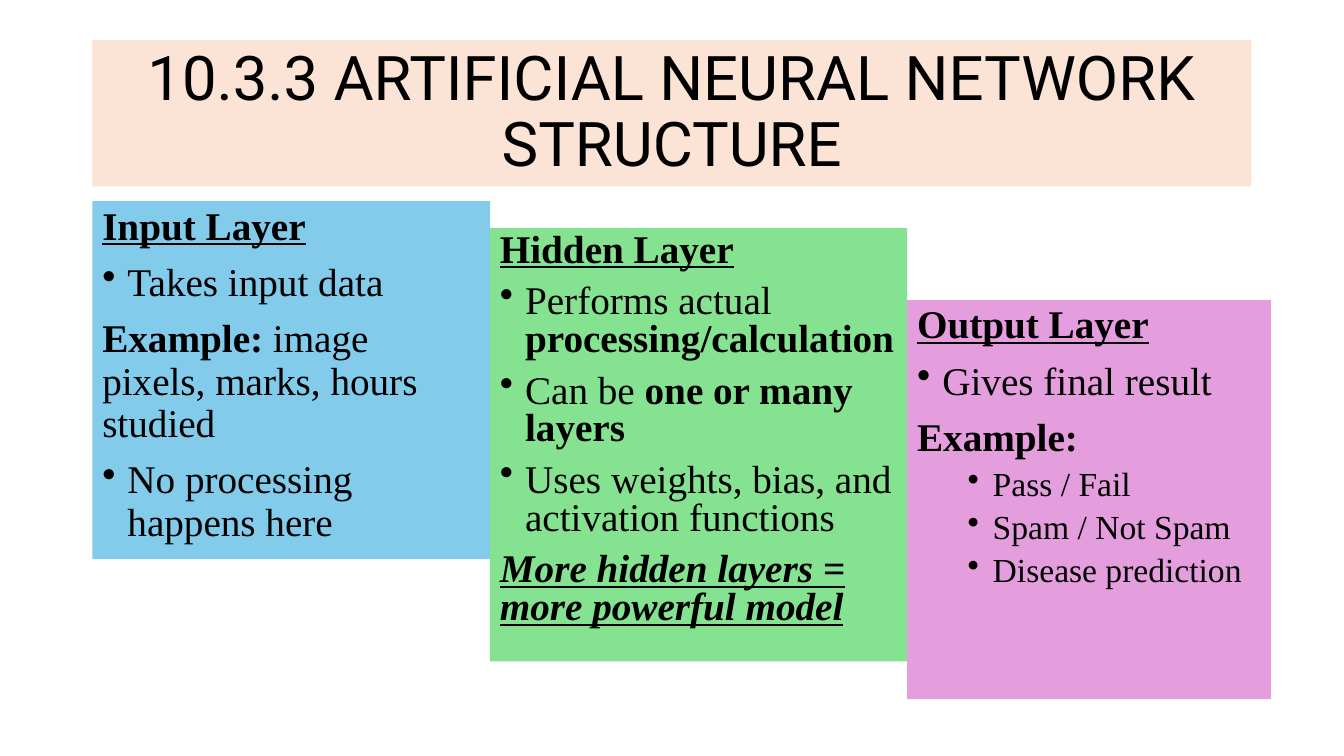
import pptx
import pptx.dml.color
import pptx.enum.shapes
import pptx.enum.text
import pptx.oxml.ns
import pptx.util
from lxml import etree

Pt = pptx.util.Pt
COLORS = {
    "title": "FBE3D6",
    "input": "83CBEB",
    "hidden": "84E291",
    "output": "E59EDD",
    "text": "000000",
}
TITLE_FONT = "Roboto"
BODY_FONT = "Times New Roman"
HANGING = 18  # bullet indent in points

# Each paragraph: (kind, runs); each run: (text, style letters b, i, u)
INPUT_LAYER = [
    ("plain", [("Input Layer", "bu")]),
    ("bullet", [("Takes input data", "")]),
    ("plain", [("Example: ", "b"), ("image pixels, marks, hours studied", "")]),
    ("bullet", [("No processing happens here", "")]),
]
HIDDEN_LAYER = [
    ("plain", [("Hidden Layer", "bu")]),
    ("bullet", [("Performs actual ", ""), ("processing/calculation", "b")]),
    ("bullet", [("Can be ", ""), ("one or many layers", "b")]),
    ("bullet", [("Uses weights, bias, and activation functions", "")]),
    ("plain", [("More hidden layers = more powerful model", "biu")]),
]
OUTPUT_LAYER = [
    ("plain", [("Output Layer", "bu")]),
    ("bullet", [("Gives final result", "")]),
    ("plain", [("Example:", "b")]),
    ("sub", [("Pass / Fail", "")]),
    ("sub", [("Spam / Not Spam", "")]),
    ("sub", [("Disease prediction", "")]),
]


def rgb(name):
    return pptx.dml.color.RGBColor.from_string(COLORS[name])


def add_panel(slide, box, color, anchor):
    """Add a borderless filled rectangle and return its text frame."""
    shape = slide.shapes.add_shape(
        pptx.enum.shapes.MSO_SHAPE.RECTANGLE, *(Pt(length) for length in box))
    shape.shadow.inherit = False
    shape.fill.solid()
    shape.fill.fore_color.rgb = rgb(color)
    shape.line.fill.background()
    text_frame = shape.text_frame
    text_frame.word_wrap = True
    text_frame.vertical_anchor = anchor
    return text_frame


def add_run(paragraph, text, font_name, size, style=""):
    run = paragraph.add_run()
    run.text = text
    run.font.name = font_name
    run.font.size = Pt(size)
    run.font.color.rgb = rgb("text")
    run.font.bold = "b" in style
    run.font.italic = "i" in style
    run.font.underline = "u" in style


def add_bullet(paragraph, left):
    properties = paragraph._p.get_or_add_pPr()
    properties.set("marL", str(Pt(left)))
    properties.set("indent", str(-Pt(HANGING)))
    bullet = etree.SubElement(properties, pptx.oxml.ns.qn("a:buChar"))
    bullet.set("char", "•")


def add_title(slide, box, text):
    text_frame = add_panel(slide, box, "title", pptx.enum.text.MSO_ANCHOR.MIDDLE)
    paragraph = text_frame.paragraphs[0]
    paragraph.alignment = pptx.enum.text.PP_ALIGN.CENTER
    paragraph.line_spacing = 0.9
    add_run(paragraph, text, TITLE_FONT, 44)


def add_layer(slide, box, color, content, line_spacing=0.9):
    text_frame = add_panel(slide, box, color, pptx.enum.text.MSO_ANCHOR.TOP)
    for index, (kind, runs) in enumerate(content):
        paragraph = text_frame.add_paragraph() if index else text_frame.paragraphs[0]
        paragraph.alignment = pptx.enum.text.PP_ALIGN.LEFT
        is_sub = kind == "sub"
        if is_sub:
            paragraph.level = 1
        if kind != "plain":
            add_bullet(paragraph, 3 * HANGING if is_sub else HANGING)
        paragraph.line_spacing = line_spacing
        if index:
            paragraph.space_before = Pt(5 if is_sub else 10)
        for text, style in runs:
            add_run(paragraph, text, BODY_FONT, 24 if is_sub else 28, style)


def main():
    presentation = pptx.Presentation()
    presentation.slide_width = Pt(960)
    presentation.slide_height = Pt(540)
    slide = presentation.slides.add_slide(presentation.slide_layouts[6])

    # Title band
    add_title(slide, (66, 28.75, 828, 104.4),
              "10.3.3 ARTIFICIAL NEURAL NETWORK STRUCTURE")

    # Three layers, stepping down from left to right
    add_layer(slide, (66, 143.75, 284.2, 255.6), "input", INPUT_LAYER)
    add_layer(slide, (350, 162.9, 298, 309.6), "hidden", HIDDEN_LAYER, 0.8)
    add_layer(slide, (648, 214.4, 259.8, 285), "output", OUTPUT_LAYER)

    presentation.save("out.pptx")


if __name__ == "__main__":
    main()
